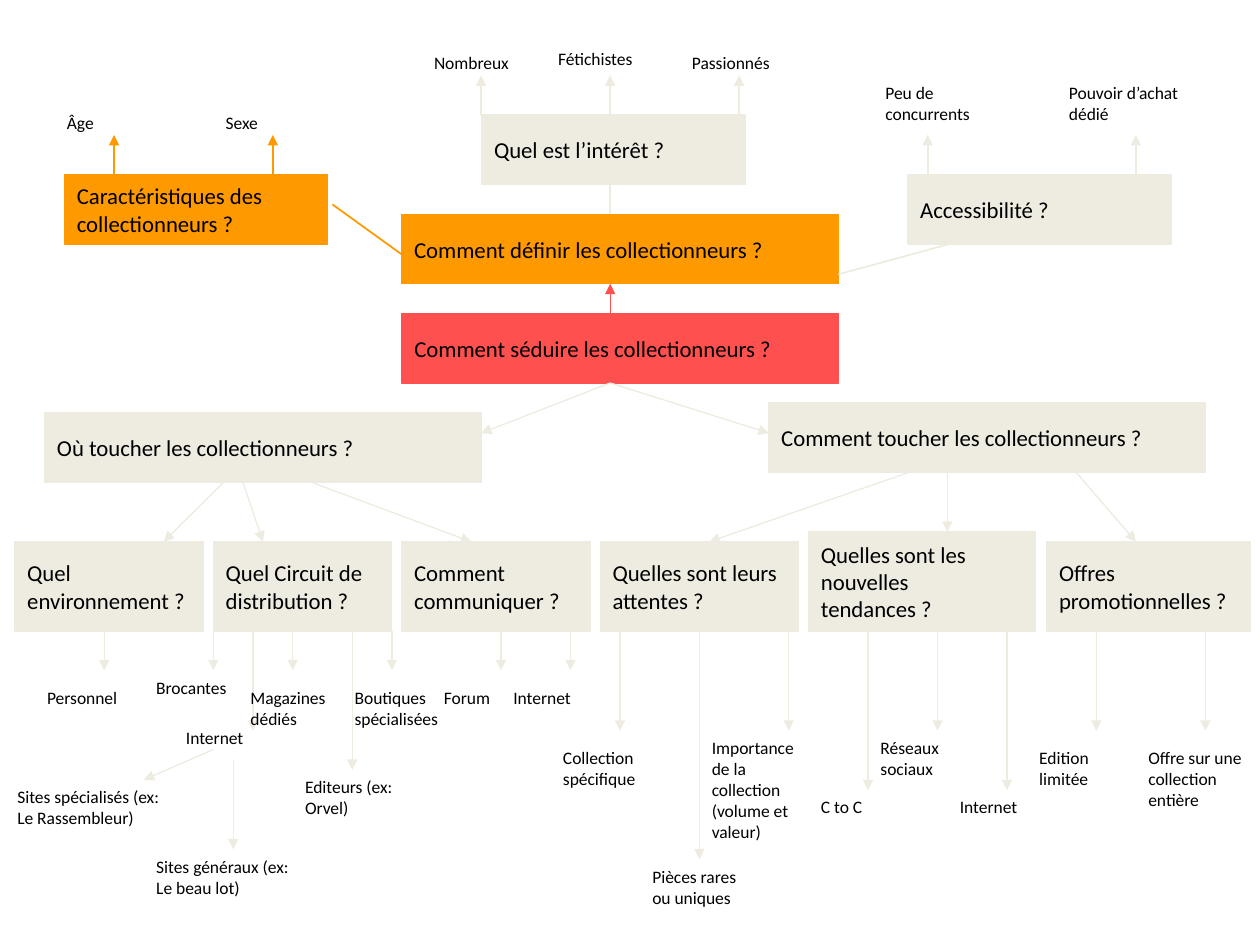
from dataclasses import dataclass

from lxml.etree import SubElement
from pptx import Presentation
from pptx.dml.color import RGBColor
from pptx.enum.shapes import MSO_CONNECTOR, MSO_SHAPE
from pptx.enum.text import MSO_ANCHOR, MSO_AUTO_SIZE, PP_ALIGN
from pptx.oxml.ns import qn
from pptx.util import Cm, Pt


@dataclass(frozen=True)
class Theme:
    font: str = "Calibri"
    ink: str = "000000"
    sand: str = "EEECE1"
    gold: str = "FF9900"
    red: str = "FF5050"
    large: int = 13
    small: int = 10
    thin: float = 0.75
    thick: float = 1


@dataclass(frozen=True)
class Box:
    text: str
    x: float
    y: float
    w: float
    h: float
    fill: str


@dataclass(frozen=True)
class Link:
    x: float
    y: float
    to_x: float
    to_y: float
    tint: str
    width: float
    arrow: bool = True


@dataclass(frozen=True)
class Label:
    text: str
    x: float
    y: float
    rows: int = 1
    w: float = 2.5


THEME = Theme()
SAND, GOLD, RED = THEME.sand, THEME.gold, THEME.red
THIN, THICK = THEME.thin, THEME.thick
WIDE, MID, LOW = 8.81, 5.31, 1.4
FLOOR, ROW = 12.72, 10.92

HEAD = Box("Comment séduire les collectionneurs ?", 8.1, 6.32, WIDE, LOW, RED)
BOXES = [
    Box("Comment toucher les collectionneurs ?", 15.5, 8.12, WIDE, LOW, SAND),
    Box("Où toucher les collectionneurs ?", 0.9, 8.32, WIDE, LOW, SAND),
    Box("Comment définir les collectionneurs ?", 8.1, 4.32, WIDE, LOW, GOLD),
    Box("Caractéristiques des\ncollectionneurs ?", 1.3, 3.52, MID, LOW, GOLD),
    Box("Quel est l’intérêt ?", 9.71, 2.32, MID, LOW, SAND),
    Box("Accessibilité ?", 18.3, 3.52, MID, LOW, SAND),
] + [
    Box(text, x, top, w, FLOOR - top, SAND)
    for text, x, top, w in [
        ("Quel environnement ?", 0.3, ROW, 3.81),
        ("Quel Circuit de distribution ?", 4.3, ROW, 3.6),
        ("Comment communiquer ?", 8.1, ROW, 3.81),
        ("Quelles sont leurs attentes ?", 12.1, ROW, 4),
        ("Quelles sont les nouvelles tendances ?", 16.3, 10.72, 4.58),
        ("Offres promotionnelles ?", 21.1, ROW, 4.1),
    ]
]

LINKS = [
    Link(12.3, 4.32, 12.3, 3.73, SAND, THICK, False),
    Link(16.9, 5.53, 19.1, 4.93, SAND, THICK, False),
    Link(8.1, 5.13, 6.7, 4.12, GOLD, THICK, False),
    Link(12.3, 6.32, 12.3, 5.72, RED, THIN),
    Link(12.3, 7.72, 9.7, 8.73, SAND, THIN),
    Link(12.3, 7.72, 15.5, 8.73, SAND, THIN),
    Link(4.5, 9.73, 3.3, ROW, SAND, THIN),
    Link(4.9, 9.73, 5.3, ROW, SAND, THIN),
    Link(6.3, 9.73, 9.5, ROW, SAND, THIN),
    Link(18.3, 9.53, 14.3, ROW, SAND, THIN),
    Link(19.1, 9.53, 19.1, 10.72, SAND, THIN),
    Link(21.7, 9.53, 22.9, ROW, SAND, THIN),
    Link(4.7, 15.32, 4.7, 17.12, SAND, THIN),
    Link(4.3, 15.11, 2.9, 15.72, SAND, THIN),
]
STEMS = [
    (3.53, 2.72, GOLD, THICK, (2.3, 5.5)),
    (3.53, 2.72, SAND, THICK, (18.7, 22.9)),
    (2.31, 1.52, SAND, THICK, (9.7, 12.3, 14.9)),
    (FLOOR, 13.51, SAND, THIN, (2.1, 4.3, 5.9, 7.9, 10.1, 11.5)),
    (FLOOR, 14.73, SAND, THIN, (5.1, 12.5, 15.9, 18.9, 22.1, 24.3)),
    (FLOOR, 15.52, SAND, THIN, (7.1,)),
    (FLOOR, 15.93, SAND, THIN, (17.5, 20.3)),
    (FLOOR, 17.32, SAND, THIN, (14.1,)),
]
LINKS += [
    Link(x, start, x, end, tint, width)
    for start, end, tint, width, places in STEMS
    for x in places
]

LABELS = [
    Label("Âge", 1.1, 2.13),
    Label("Sexe", 4.3, 2.13),
    Label("Nombreux", 8.5, 0.92),
    Label("Fétichistes", 11, 0.84),
    Label("Passionnés", 13.7, 0.92),
    Label("Peu de concurrents", 17.6, 1.52, 2),
    Label("Pouvoir d’achat dédié", 21.3, 1.52, 2, 3),
    Label("Personnel", 0.7, 13.72),
    Label("Brocantes", 2.9, 13.52),
    Label("Internet", 3.5, 14.53),
    Label("Sites spécialisés (ex: Le Rassembleur)", 0.1, 15.72, 3, 3.4),
    Label("Sites généraux (ex: Le beau lot)", 2.9, 17.13, 2, 3.4),
    Label("Magazines dédiés", 4.8, 13.72, 2),
    Label("Boutiques spécialisées", 6.9, 13.72, 2),
    Label("Editeurs (ex: Orvel)", 5.9, 15.52, 2, 2.41),
    Label("Forum", 8.7, 13.72),
    Label("Internet", 10.1, 13.72),
    Label("Collection spécifique", 11.1, 14.93, 2),
    Label("Pièces rares ou uniques", 12.9, 17.33, 2),
    Label("Importance de la collection (volume et valeur)", 14.1, 14.73, 5),
    Label("C to C", 16.3, 15.93),
    Label("Réseaux sociaux", 17.5, 14.73, 2),
    Label("Internet", 19.1, 15.93),
    Label("Edition limitée", 20.7, 14.93, 2),
    Label("Offre sur une collection entière", 22.9, 14.93, 4),
]


def tint(text: str) -> RGBColor:
    return RGBColor.from_string(text)


def write(shape, text: str, size: int, anchor, fit) -> None:
    frame = shape.text_frame
    frame.text = text
    frame.word_wrap = True
    frame.auto_size = fit
    frame.vertical_anchor = anchor
    for para in frame.paragraphs:
        para.alignment = PP_ALIGN.LEFT
        para.font.name = THEME.font
        para.font.size = Pt(size)
        para.font.color.rgb = tint(THEME.ink)


def style_box(shape, box: Box) -> None:
    shape.left, shape.top = Cm(box.x), Cm(box.y)
    shape.width, shape.height = Cm(box.w), Cm(box.h)
    shape.shadow.inherit = False
    shape.fill.solid()
    shape.fill.fore_color.rgb = tint(box.fill)
    shape.line.color.rgb = tint(box.fill)
    shape.line.width = Pt(THIN)
    write(shape, box.text, THEME.large, MSO_ANCHOR.MIDDLE, MSO_AUTO_SIZE.NONE)


def draw_box(slide, box: Box) -> None:
    shape = slide.shapes.add_shape(
        MSO_SHAPE.RECTANGLE, Cm(box.x), Cm(box.y), Cm(box.w), Cm(box.h))
    style_box(shape, box)


def draw_link(slide, link: Link) -> None:
    line = slide.shapes.add_connector(
        MSO_CONNECTOR.STRAIGHT,
        Cm(link.x), Cm(link.y), Cm(link.to_x), Cm(link.to_y))
    line.line.color.rgb = tint(link.tint)
    line.line.width = Pt(link.width)
    props = line._element.spPr
    if link.arrow:
        SubElement(props.find(qn("a:ln")), qn("a:tailEnd"), type="triangle")
    SubElement(props, qn("a:effectLst"))


def draw_label(slide, label: Label) -> None:
    shape = slide.shapes.add_textbox(
        Cm(label.x), Cm(label.y), Cm(label.w), Cm(0.26 + 0.42 * label.rows))
    write(shape, label.text, THEME.small, MSO_ANCHOR.TOP,
          MSO_AUTO_SIZE.SHAPE_TO_FIT_TEXT)


def main() -> None:
    deck = Presentation()
    deck.slide_width, deck.slide_height = Cm(25.4), Cm(19.05)
    slide = deck.slides.add_slide(deck.slide_layouts[5])
    style_box(slide.shapes.title, HEAD)
    for box in BOXES:
        draw_box(slide, box)
    for link in LINKS:
        draw_link(slide, link)
    for label in LABELS:
        draw_label(slide, label)
    deck.save("out.pptx")


if __name__ == "__main__":
    main()
